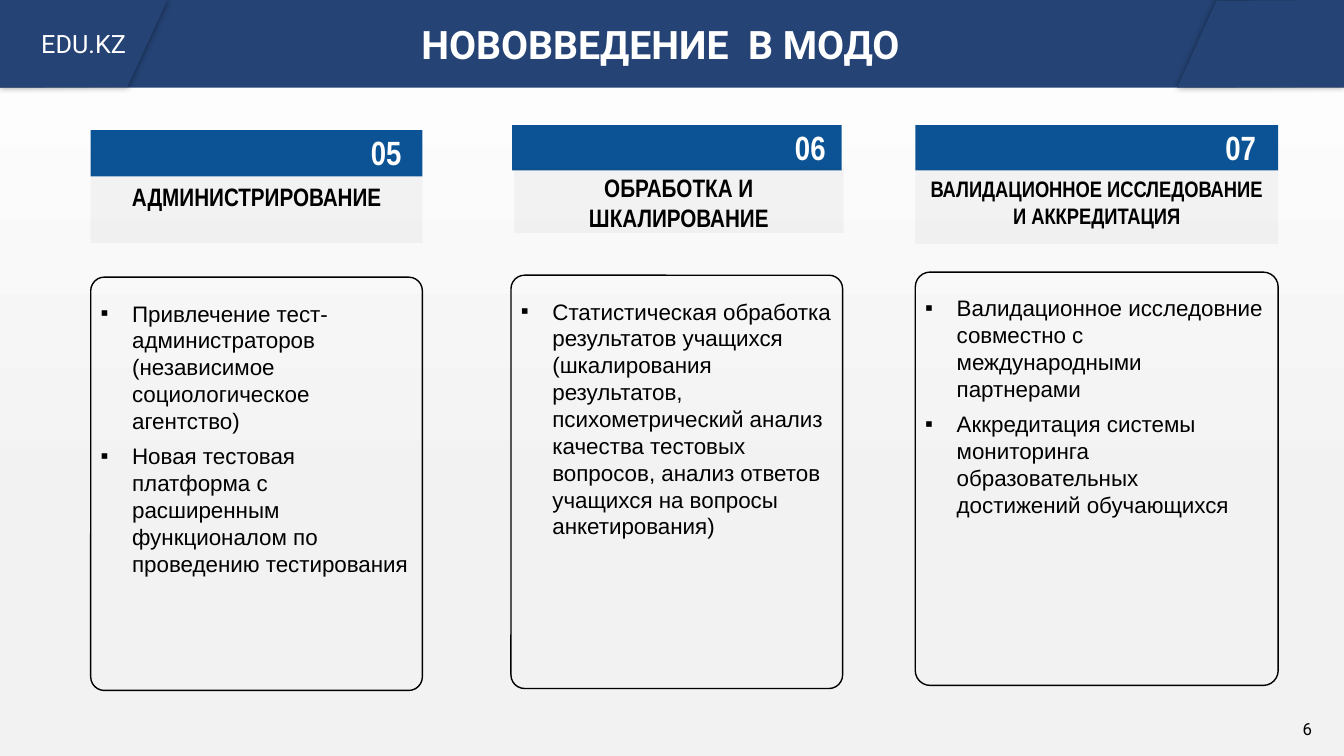
import pptx
import pptx.util
import pptx.dml.color
import pptx.enum.shapes
import pptx.enum.text
import pptx.oxml
import pptx.oxml.ns
import lxml.etree

Pt = pptx.util.Pt
SHAPE = pptx.enum.shapes.MSO_SHAPE
ALIGN = pptx.enum.text.PP_ALIGN
ANCHOR = pptx.enum.text.MSO_ANCHOR
FIT = pptx.enum.text.MSO_AUTO_SIZE
qn = pptx.oxml.ns.qn

COLORS = {"navy": "254375", "blue": "0B5394", "veil": "191919",
          "white": "FFFFFF", "grey": "F2F2F2", "black": "000000"}
W, H = 960, 540
BAND_H = 62.5


def rgb(name):
    return pptx.dml.color.RGBColor.from_string(COLORS[name])


def sub(parent, tag, **attrs):
    return lxml.etree.SubElement(parent, qn(tag), attrs)


class Deck:
    FONTS = {
        "title": {"name": "Roboto", "size": Pt(28), "bold": True},
        "site": {"name": "Roboto", "size": Pt(18)},
        "page": {"name": "Roboto", "size": Pt(12)},
        "number": {"name": "Arial Narrow", "size": Pt(24), "bold": True},
        "head": {"name": "Arial Narrow", "size": Pt(18), "bold": True},
        "head_small": {"name": "Arial Narrow", "size": Pt(16), "bold": True},
        "body": {"name": "Arial", "size": Pt(16)},
    }

    def __init__(self):
        self.prs = pptx.Presentation()
        self.prs.slide_width, self.prs.slide_height = Pt(W), Pt(H)
        self.s = self.prs.slides.add_slide(self.prs.slide_layouts[5])

    def background(self, top, bottom, end):
        fill = self.s.background.fill
        fill.gradient()
        fill.gradient_angle = 270
        for stop, name, pos in zip(fill.gradient_stops, (top, bottom), (0, end)):
            stop.color.rgb, stop.position = rgb(name), pos

    def fill_text(self, sp, texts, style, color, align=ALIGN.LEFT,
                  anchor=ANCHOR.TOP, bullet=None, **spacing):
        tf = sp.text_frame
        tf.word_wrap, tf.vertical_anchor = True, anchor
        for i, text in enumerate(texts):
            p = tf.paragraphs[0] if i == 0 else tf.add_paragraph()
            if bullet:
                pPr = p._p.get_or_add_pPr()
                indent = Pt(22.5)
                pPr.set("marL", str(indent))
                pPr.set("indent", str(-indent))
                sub(pPr, "a:buFont", typeface="Arial")
                sub(pPr, "a:buChar", char=bullet)
            for key, value in {"alignment": align, **spacing}.items():
                setattr(p, key, value)
            r = p.add_run()
            r.text = text
            for key, value in self.FONTS[style].items():
                setattr(r.font, key, value)
            r.font.color.rgb = rgb(color)

    def text(self, box, texts, style, color, **fmt):
        sp = self.s.shapes.add_textbox(*map(Pt, box))
        self.fill_text(sp, texts, style, color, **fmt)
        sp.text_frame.auto_size = FIT.SHAPE_TO_FIT_TEXT

    def title(self, box, text, style, color, **fmt):
        sp = self.s.shapes.title
        # Bring the title in front of the header band
        sp.element.getparent().append(sp.element)
        sp.left, sp.top, sp.width, sp.height = map(Pt, box)
        self.fill_text(sp, [text], style, color, **fmt)
        tf = sp.text_frame
        tf.auto_size = FIT.SHAPE_TO_FIT_TEXT
        for side, inset in {"left": 7.2, "top": 3.6, "right": 7.2, "bottom": 3.6}.items():
            setattr(tf, "margin_" + side, Pt(inset))

    def shape(self, kind, box, fill=None, line=None, adj=None, alpha=None):
        sp = self.s.shapes.add_shape(kind, *map(Pt, box))
        sp.shadow.inherit = False
        if adj is not None:
            sp.adjustments[0] = adj
        if fill:
            sp.fill.solid()
            sp.fill.fore_color.rgb = rgb(fill)
        else:
            sp.fill.background()
        if alpha:
            sub(sp.element.spPr.find(".//" + qn("a:srgbClr")), "a:alpha", val=str(alpha * 1000))
        if line:
            sp.line.color.rgb, sp.line.width = rgb(line), Pt(1)
        else:
            sp.line.fill.background()
        return sp

    def tab(self, points, fill):
        start, *rest = [tuple(map(Pt, point)) for point in points]
        fb = self.s.shapes.build_freeform(*start)
        fb.add_line_segments(rest, close=True)
        sp = fb.convert_to_shape()
        sp.fill.solid()
        sp.fill.fore_color.rgb = rgb(fill)
        sp.line.fill.background()
        # Soft shadow around the edge
        sp.shadow.inherit = False
        effects = sp.element.spPr.find(qn("a:effectLst"))
        shadow = sub(effects, "a:outerShdw", blurRad=str(Pt(5)), dist="0", dir="0",
                     algn="ctr", rotWithShape="0")
        sub(sub(shadow, "a:srgbClr", val=COLORS["black"]), "a:alpha", val="40000")
        return sp


# x, width, bar top and height, head (x, top, height), card (x, top),
# number (x, width), number, heading, heading style, bullets
COLUMNS = [
    (64.8, 236.9, 92.9, 33.1, (64.8, 126, 47.5), (64.8, 198), (208.8, 85), "05",
     "АДМИНИСТРИРОВАНИЕ", "head",
     ["Привлечение тест- администраторов (независимое социологическое агентство)",
      "Новая тестовая платформа с расширенным функционалом по проведению тестирования"]),
    (365.8, 235.4, 89.3, 32.4, (367.2, 119.5, 46.8), (365, 196.6), (534.2, 62.6), "06",
     "ОБРАБОТКА И ШКАЛИРОВАНИЕ", "head",
     ["Статистическая обработка результатов учащихся (шкалирования результатов, "
      "психометрический анализ качества тестовых вопросов, анализ ответов учащихся "
      "на вопросы анкетирования)"]),
    (653.8, 259.2, 89.3, 32.4, (653.8, 121.7, 52.6), (653.8, 194.4), (841.7, 62.6), "07",
     "ВАЛИДАЦИОННОЕ ИССЛЕДОВАНИЕ И АККРЕДИТАЦИЯ", "head_small",
     ["Валидационное исследовние совместно с международными партнерами",
      "Аккредитация системы мониторинга образовательных достижений обучающихся"]),
]


def main():
    d = Deck()
    d.background("white", "grey", 0.68)

    # Header band with a slanted tab at each end
    d.shape(SHAPE.ROUNDED_RECTANGLE, (0, 0, W, BAND_H), "navy", adj=0)
    site = d.tab([(0, 0), (0, BAND_H), (91, 62), (119.5, 0)], "navy")
    d.fill_text(site, ["EDU.KZ"], "site", "white", align=ALIGN.CENTER, anchor=ANCHOR.MIDDLE)
    d.tab([(W, 62), (W, 0), (869, 0.5), (841, BAND_H)], "navy")
    d.title((293.8, 8.6, 450.7, 44), "НОВОВВЕДЕНИЕ  В МОДО", "title", "white",
            line_spacing=1.07, space_before=Pt(0), space_after=Pt(8))

    # Three columns: numbered bar, heading, card with bullets
    for (x, w, bar_y, bar_h, (head_x, head_y, head_h), (card_x, card_y),
         (num_x, num_w), number, heading, style, bullets) in COLUMNS:
        card_w = max(w, 236.9)
        d.shape(SHAPE.RECTANGLE, (x, bar_y, w, bar_h), "blue")
        d.text((num_x, bar_y - 2.2, num_w, 36), [number], "number", "white", align=ALIGN.RIGHT)
        head = d.shape(SHAPE.RECTANGLE, (head_x, head_y, w, head_h), "veil", alpha=4)
        d.fill_text(head, [heading], style, "black", align=ALIGN.CENTER)
        d.shape(SHAPE.ROUNDED_RECTANGLE, (card_x, card_y, card_w, 295.2), line="black", adj=0.041)
        d.text((card_x, card_y + 12.5, card_w, 200), bullets, "body", "black",
               bullet="▪", space_after=Pt(6))

    # Page number
    d.text((901.4, 509.8, 64.8, 21.6), ["6"], "page", "black", align=ALIGN.CENTER)
    d.prs.save("out.pptx")


if __name__ == "__main__":
    main()
